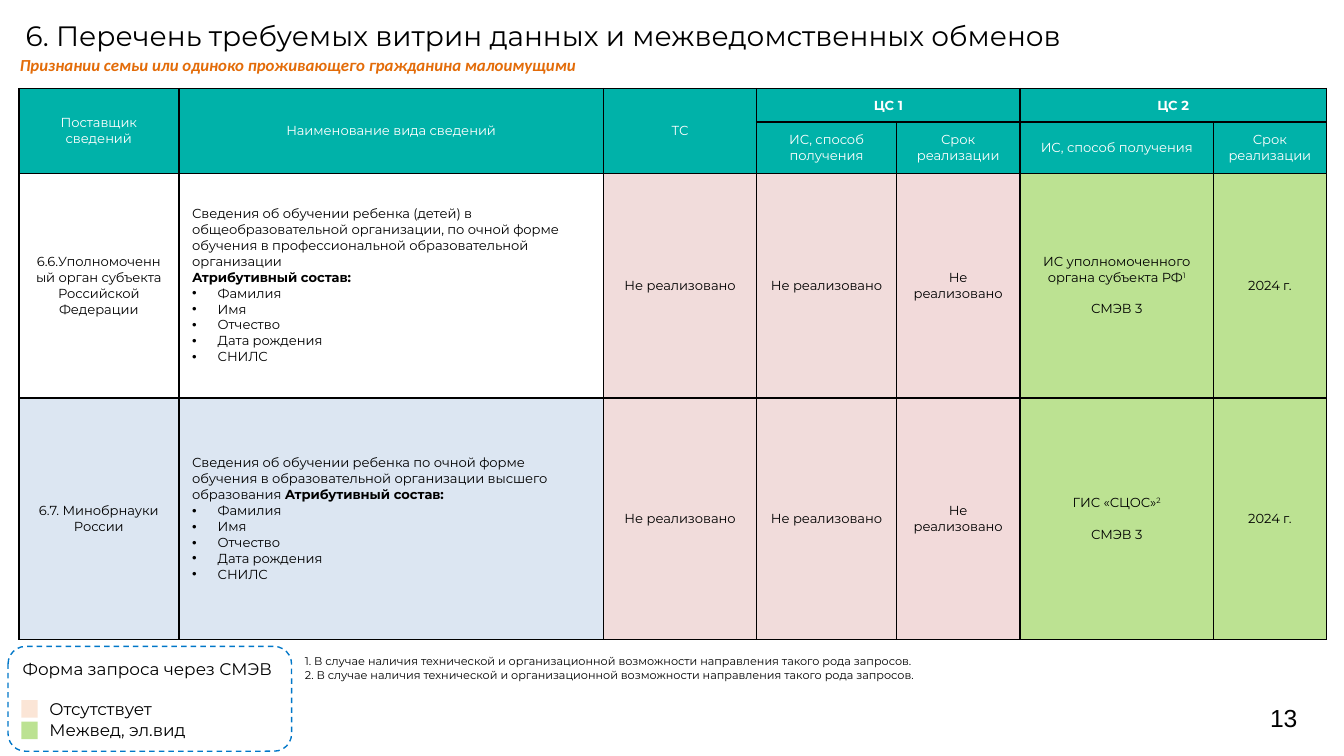
from dataclasses import dataclass

from lxml.etree import SubElement
from pptx import Presentation
from pptx.dml.color import RGBColor
from pptx.enum.dml import MSO_LINE
from pptx.enum.shapes import MSO_SHAPE as Shape
from pptx.enum.text import MSO_ANCHOR as Anchor, MSO_AUTO_SIZE as AutoSize, PP_ALIGN as Align
from pptx.oxml.ns import qn
from pptx.util import Inches, Pt


@dataclass(frozen=True)
class Theme:
    font: str = "Montserrat"
    subtitle_font: str = "Calibri"
    number_font: str = "Arial"
    black: str = "000000"
    white: str = "FFFFFF"
    orange: str = "E36C09"
    blue: str = "0077C8"
    teal: str = "00B2A9"
    pink: str = "F1DCDB"
    light_pink: str = "F2DADA"
    peach: str = "FBE5D6"
    green: str = "BCE292"
    pale_blue: str = "DCE6F2"
    title_size: float = 15
    number_size: float = 13.2
    legend_size: float = 9
    table_size: float = 7
    note_size: float = 6


@dataclass(frozen=True)
class Line:
    text: str
    bold_tail: str = ""
    superscript: str = ""
    bold: bool = False
    bullet: bool = False
    indent: float = 0
    gap: float = 0


THEME = Theme()
COLUMNS = [1.19, 3.16, 1.14, 1.04, 0.92, 1.44, 0.84]
ROWS = [0.25, 0.38, 1.67, 1.8]
TABLE_GAP = 8.5
LEGEND_GAP = 11

MISSING = "Не реализовано"
METHOD, TERM = "ИС, способ получения", "Срок реализации"
HEADERS = [
    (0, 0, 1, 0, "Поставщик сведений"),
    (0, 1, 1, 1, "Наименование вида сведений"),
    (0, 2, 1, 2, "ТС"),
    (0, 3, 0, 4, "ЦС 1"),
    (0, 5, 0, 6, "ЦС 2"),
    (1, 3, 1, 3, METHOD),
    (1, 4, 1, 4, TERM),
    (1, 5, 1, 5, METHOD),
    (1, 6, 1, 6, TERM),
]
ATTRIBUTES_TITLE = "Атрибутивный состав:"
ATTRIBUTES = [
    Line(name, bullet=True, indent=0.19)
    for name in ("Фамилия", "Имя", "Отчество", "Дата рождения", "СНИЛС")
]
SUPPLIERS = [
    (
        "6.6.Уполномоченный орган субъекта Российской Федерации",
        [
            Line("Сведения об обучении ребенка (детей) в общеобразовательной организации, "
                 "по очной форме обучения в профессиональной образовательной организации"),
            Line(ATTRIBUTES_TITLE, bold=True),
        ],
        Line("ИС уполномоченного органа субъекта РФ", superscript="1"),
        None,
    ),
    (
        "6.7. Минобрнауки России",
        [Line("Сведения об обучении ребенка по очной форме обучения в образовательной "
              "организации высшего образования ", bold_tail=ATTRIBUTES_TITLE)],
        Line("ГИС «СЦОС»", superscript="2"),
        THEME.pale_blue,
    ),
]
NOTE = "В случае наличия технической и организационной возможности направления такого рода запросов."


def set_indent(paragraph, line):
    properties = paragraph._p.get_or_add_pPr()
    properties.set("marL", str(Inches(line.indent)))
    if line.bullet:
        properties.set("indent", str(-Inches(line.indent)))
        SubElement(properties, qn("a:buFont"), typeface="Arial")
        SubElement(properties, qn("a:buChar"), char="•")


def write(frame, lines, size, color=THEME.black, font=THEME.font, align=Align.LEFT, italic=False):
    for number, line in enumerate(lines):
        paragraph = frame.add_paragraph() if number else frame.paragraphs[0]
        if line.indent:
            set_indent(paragraph, line)
        paragraph.alignment = align
        paragraph.space_before = Pt(line.gap)
        paragraph.font.name = font
        paragraph.font.size = Pt(size)
        paragraph.font.bold = line.bold
        paragraph.font.italic = italic
        paragraph.font.color.rgb = RGBColor.from_string(color)
        paragraph.add_run().text = line.text
        if line.bold_tail:
            span = paragraph.add_run()
            span.text = line.bold_tail
            span.font.bold = True
        if line.superscript:
            span = paragraph.add_run()
            span.text = line.superscript
            span._r.get_or_add_rPr().set("baseline", "30000")


def clear_margins(frame):
    frame.margin_left = frame.margin_right = frame.margin_top = frame.margin_bottom = 0


def add_title(page, text):
    title = page.shapes.title
    title.left, title.top, title.width, title.height = map(Inches, (0.19, 0.14, 9.07, 0.25))
    frame = title.text_frame
    frame.auto_size = AutoSize.NONE
    frame.vertical_anchor = Anchor.TOP
    clear_margins(frame)
    write(frame, [Line(text)], THEME.title_size)


def add_text(page, place, lines, size, **style):
    box = page.shapes.add_textbox(*map(Inches, place))
    box.text_frame.word_wrap = True
    write(box.text_frame, lines, size, **style)
    return box.text_frame


def add_swatch(page, top, color):
    swatch = page.shapes.add_shape(Shape.RECTANGLE, *map(Inches, (0.16, top, 0.12, 0.13)))
    swatch.shadow.inherit = False
    swatch.fill.solid()
    swatch.fill.fore_color.rgb = RGBColor.from_string(color)
    swatch.line.fill.background()


def add_legend(page):
    add_text(page, (0.07, 4.85, 2.1, 0.71), [
        Line("Форма запроса через СМЭВ"),
        Line("Отсутствует", indent=0.2, gap=LEGEND_GAP),
        Line("Межвед, эл.вид", indent=0.2),
    ], THEME.legend_size)
    add_swatch(page, 5.21, THEME.peach)
    add_swatch(page, 5.37, THEME.green)
    frame = page.shapes.add_shape(Shape.ROUNDED_RECTANGLE, *map(Inches, (0.06, 4.81, 2.11, 0.78)))
    frame.shadow.inherit = False
    frame.fill.background()
    frame.line.color.rgb = RGBColor.from_string(THEME.blue)
    frame.line.width = Pt(0.75)
    frame.line.dash_style = MSO_LINE.DASH


def style_cell(cell, fill):
    properties = cell._tc.get_or_add_tcPr()
    for side in ("lnL", "lnR", "lnT", "lnB"):
        border = SubElement(properties, qn(f"a:{side}"), w=str(Pt(1)))
        SubElement(SubElement(border, qn("a:solidFill")), qn("a:srgbClr"), val=THEME.black)
    cell.vertical_anchor = Anchor.MIDDLE
    if fill:
        cell.fill.solid()
        cell.fill.fore_color.rgb = RGBColor.from_string(fill)
    else:
        cell.fill.background()


def add_exchange_table(page):
    table = page.shapes.add_table(
        len(ROWS), len(COLUMNS), *map(Inches, (0.14, 0.66, sum(COLUMNS), sum(ROWS)))
    ).table
    table.first_row = table.horz_banding = False
    for column, width in zip(table.columns, COLUMNS):
        column.width = Inches(width)
    for row, height in zip(table.rows, ROWS):
        row.height = Inches(height)

    for top, left, bottom, right, text in HEADERS:
        cell = table.cell(top, left)
        if (top, left) != (bottom, right):
            cell.merge(table.cell(bottom, right))
        for row in range(top, bottom + 1):
            for column in range(left, right + 1):
                style_cell(table.cell(row, column), THEME.teal)
        write(cell.text_frame, [Line(text, bold=right > left)], THEME.table_size,
              color=THEME.white, align=Align.CENTER)

    for row, (supplier, details, system, fill) in enumerate(SUPPLIERS, start=2):
        contents = [
            ([Line(supplier)], fill),
            (details + ATTRIBUTES, fill),
            ([Line(MISSING)], THEME.pink),
            ([Line(MISSING)], THEME.pink),
            ([Line(MISSING)], THEME.light_pink),
            ([system, Line("СМЭВ 3", gap=TABLE_GAP)], THEME.green),
            ([Line("2024 г.")], THEME.green),
        ]
        for column, (lines, color) in enumerate(contents):
            cell = table.cell(row, column)
            style_cell(cell, color)
            write(cell.text_frame, lines, THEME.table_size,
                  align=Align.LEFT if column == 1 else Align.CENTER)


def main():
    deck = Presentation()
    deck.slide_width, deck.slide_height = Inches(10), Inches(10 * 9 / 16)
    page = deck.slides.add_slide(deck.slide_layouts[5])
    add_title(page, "6. Перечень требуемых витрин данных и межведомственных обменов")
    add_text(page, (0.05, 0.36, 7.83, 0.25),
             [Line("Признании семьи или одиноко проживающего гражданина малоимущими", bold=True)],
             THEME.legend_size, color=THEME.orange, font=THEME.subtitle_font, italic=True)
    add_exchange_table(page)
    add_legend(page)
    add_text(page, (2.17, 4.82, 7.14, 0.3), [Line(f"{number}. {NOTE}") for number in (1, 2)],
             THEME.note_size, align=Align.JUSTIFY)
    number = add_text(page, (9.45, 5.19, 0.47, 0.3), [Line("13")], THEME.number_size,
                      font=THEME.number_font)
    clear_margins(number)
    number.vertical_anchor = Anchor.MIDDLE
    deck.save("out.pptx")


if __name__ == "__main__":
    main()
